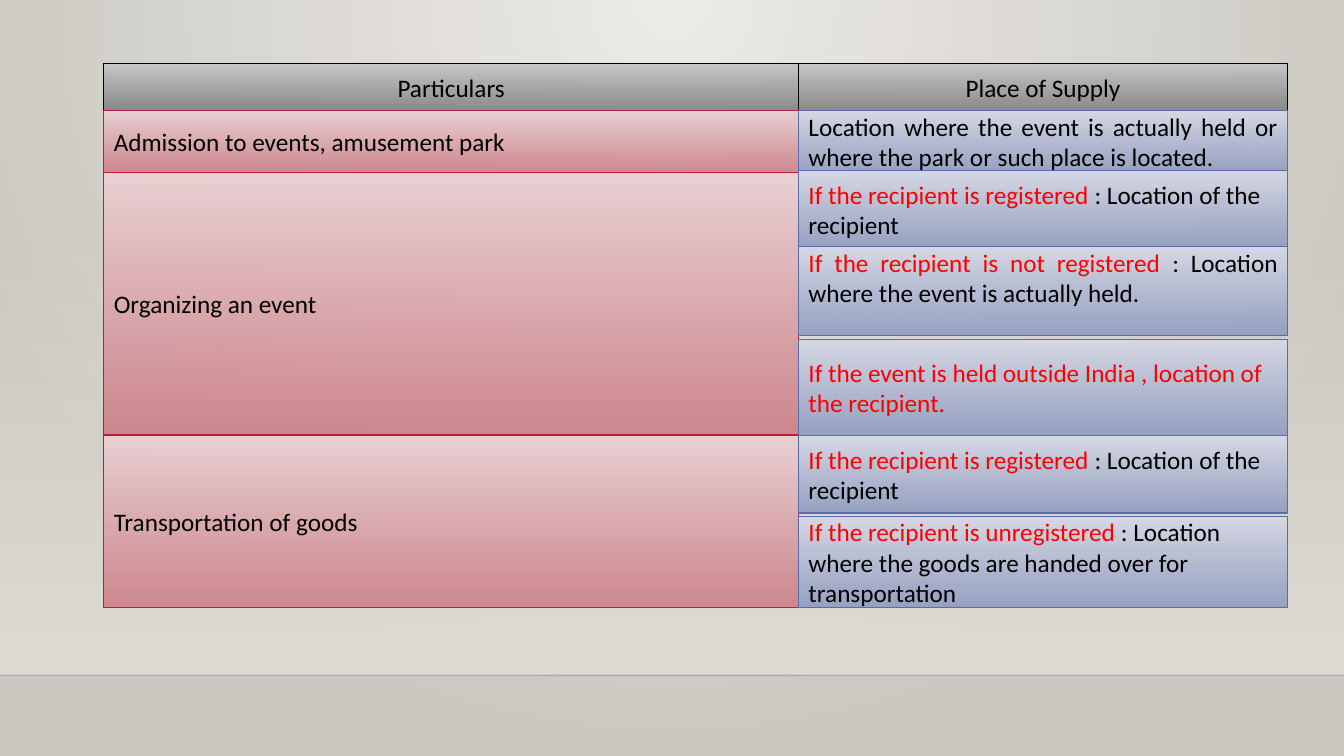
from pptx import Presentation
from pptx.dml.color import RGBColor
from pptx.enum.shapes import MSO_CONNECTOR as Connector, MSO_SHAPE as Shape
from pptx.enum.text import MSO_ANCHOR as Anchor, PP_ALIGN as Align
from pptx.oxml import parse_xml
from pptx.oxml.ns import nsdecls, qn
from pptx.util import Inches, Pt

BLACK = RGBColor(0x00, 0x00, 0x00)
RED = RGBColor(0xFF, 0x00, 0x00)
WALL_LIGHT = RGBColor(0xEC, 0xEA, 0xE7)
WALL_DARK = RGBColor(0xCA, 0xC7, 0xC1)
HAZE = RGBColor(0xDF, 0xDB, 0xD5)
HEADER = (RGBColor(0xC8, 0xC8, 0xC8), RGBColor(0x84, 0x84, 0x84), BLACK)
ROSE = (RGBColor(0xEA, 0xD1, 0xD3), RGBColor(0xCD, 0x82, 0x8A), RGBColor(0xB7, 0x1E, 0x42))
BLUE = (RGBColor(0xD6, 0xD9, 0xE5), RGBColor(0x92, 0x9D, 0xC0), RGBColor(0x58, 0x6E, 0xA6))

WIDTH, HEIGHT = 13.33, 7.5
FLOOR_TOP, HAZE_TOP = 6.7, 2.21
COLUMNS = [(1.03, 6.89), (7.92, 4.85)]

REGISTERED = [("If the recipient is registered ", RED), (": Location of the recipient", BLACK)]
CELLS = [
    (0, 0.63, 0.47, HEADER, Align.CENTER, [("Particulars", BLACK)]),
    (1, 0.63, 0.47, HEADER, Align.CENTER, [("Place of Supply", BLACK)]),
    (0, 1.1, 0.61, ROSE, Align.JUSTIFY, [("Admission to events, amusement park", BLACK)]),
    (1, 1.1, 0.61, BLUE, Align.JUSTIFY, [
        ("Location where the event is actually held or where the park or such place is located.", BLACK)]),
    (0, 1.71, 2.6, ROSE, Align.JUSTIFY, [("Organizing an event", BLACK)]),
    (1, 1.69, 0.77, BLUE, Align.LEFT, REGISTERED),
    (1, 2.45, 0.88, BLUE, Align.JUSTIFY, [
        ("If the recipient is not registered ", RED),
        (": Location where the event is actually held.", BLACK)]),
    (1, 3.37, 0.95, BLUE, Align.LEFT, [
        ("If the event is held outside India , location of the recipient.", RED)]),
    (0, 4.32, 1.71, ROSE, Align.JUSTIFY, [("Transportation of goods", BLACK)]),
    (1, 4.32, 0.77, BLUE, Align.LEFT, REGISTERED),
    (1, 5.12, 0.91, BLUE, Align.LEFT, [
        ("If the recipient is unregistered ", RED),
        (": Location where the goods are handed over for transportation", BLACK)]),
]
TOP_ALIGNED = 2.45


def set_opacity(color, percent):
    color.append(parse_xml(f'<a:alpha {nsdecls("a")} val="{percent * 1000}"/>'))


def set_gradient(fill, start, end):
    fill.gradient()
    for stop, color in zip(fill.gradient_stops, (start, end)):
        stop.color.rgb = color


def add_panel(slide, left, top, width, height, start, end, opacities):
    shape = slide.shapes.add_shape(
        Shape.RECTANGLE, Inches(left), Inches(top), Inches(width), Inches(height))
    shape.shadow.inherit = False
    set_gradient(shape.fill, start, end)
    shape.fill.gradient_angle = 270
    for color, percent in zip(shape._element.spPr.iter(qn("a:srgbClr")), opacities):
        set_opacity(color, percent)
    shape.line.fill.background()
    return shape


def add_background(slide):
    set_gradient(slide.background.fill, WALL_LIGHT, WALL_DARK)
    linear = next(slide._element.iter(qn("a:lin")))
    linear.getparent().replace(linear, parse_xml(
        f'<a:path {nsdecls("a")} path="circle">'
        '<a:fillToRect l="43000" t="0" r="43000" b="100000"/></a:path>'))
    add_panel(slide, 0, HAZE_TOP, WIDTH, FLOOR_TOP - HAZE_TOP, HAZE, HAZE, (0, 100))
    edge = slide.shapes.add_connector(
        Connector.STRAIGHT, 0, Inches(FLOOR_TOP), Inches(WIDTH), Inches(FLOOR_TOP))
    edge.line.color.rgb = BLACK
    edge.line.width = Pt(1)
    properties = edge._element.spPr
    set_opacity(next(properties.iter(qn("a:srgbClr"))), 20)
    properties.append(parse_xml(f'<a:effectLst {nsdecls("a")}/>'))


def add_cell(slide, column, top, height, palette, alignment, runs):
    left, width = COLUMNS[column]
    start, end, border = palette
    cell = add_panel(slide, left, top, width, height, start, end, (100, 92))
    cell.line.color.rgb = border
    cell.line.width = Pt(0.75)
    frame = cell.text_frame
    frame.word_wrap = True
    frame.vertical_anchor = Anchor.MIDDLE
    if top == TOP_ALIGNED:
        frame.vertical_anchor = Anchor.TOP
        frame.margin_top = 0
    paragraph = frame.paragraphs[0]
    paragraph.alignment = alignment
    paragraph.font.name = "Calibri"
    paragraph.font.size = Pt(18)
    for text, color in runs:
        run = paragraph.add_run()
        run.text = text
        run.font.color.rgb = color


def main():
    """Build the place of supply slide."""
    presentation = Presentation()
    presentation.slide_width = Inches(WIDTH)
    presentation.slide_height = Inches(HEIGHT)
    slide = presentation.slides.add_slide(presentation.slide_layouts[6])
    add_background(slide)
    for cell in CELLS:
        add_cell(slide, *cell)
    presentation.save("out.pptx")


if __name__ == "__main__":
    main()
